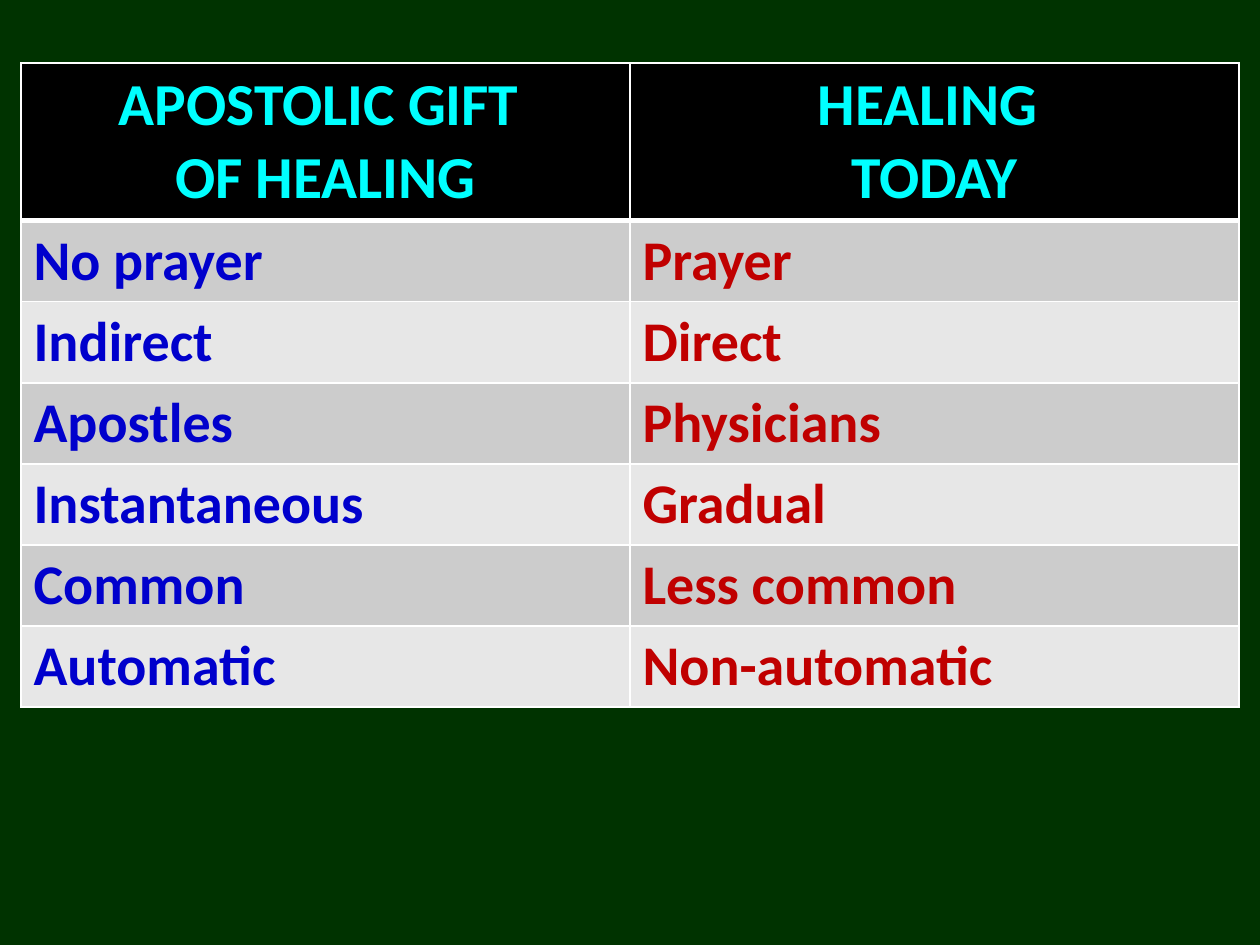
from lxml import etree
from pptx import Presentation
from pptx.dml.color import RGBColor
from pptx.enum import text
from pptx.oxml import ns
from pptx.util import Emu, Pt

GREEN = RGBColor(0x00, 0x33, 0x00)
BLACK = RGBColor(0x00, 0x00, 0x00)
WHITE = RGBColor(0xFF, 0xFF, 0xFF)
CYAN = RGBColor(0x00, 0xFF, 0xFF)
BLUE = RGBColor(0x00, 0x00, 0xCC)
RED = RGBColor(0xC0, 0x00, 0x00)
GREY = RGBColor(0xCC, 0xCC, 0xCC)
PALE = RGBColor(0xE7, 0xE7, 0xE7)

HEADINGS = ("APOSTOLIC GIFT \nOF HEALING", "HEALING \nTODAY")
CONTRASTS = [
    ("No prayer", "Prayer"),
    ("Indirect", "Direct"),
    ("Apostles", "Physicians"),
    ("Instantaneous", "Gradual"),
    ("Common", "Less common"),
    ("Automatic", "Non-automatic"),
]


def px(n):
    return Emu(round(n * 914400 / 126))


class Deck:
    header = {"name": "Calibri", "size": Pt(34), "bold": True}
    body = {"name": "Calibri", "size": Pt(32), "bold": True}

    def __init__(self, width, height):
        self.prs = Presentation()
        self.prs.slide_width, self.prs.slide_height = px(width), px(height)
        self.s = self.prs.slides.add_slide(self.prs.slide_layouts[6])

    def background(self, color):
        fill = self.s.background.fill
        fill.solid()
        fill.fore_color.rgb = color

    def borders(self, cell, widths):
        tc_pr = cell._tc.get_or_add_tcPr()
        for side, width in widths.items():
            ln = etree.SubElement(tc_pr, ns.qn(f"a:ln{side}"), w=str(Pt(width)))
            solid = etree.SubElement(ln, ns.qn("a:solidFill"))
            etree.SubElement(solid, ns.qn("a:srgbClr"), val=str(WHITE))

    def cell(self, cell, words, style, color, fill, align, widths):
        self.borders(cell, widths)
        cell.fill.solid()
        cell.fill.fore_color.rgb = fill
        tf = cell.text_frame
        tf.text = words
        for p in tf.paragraphs:
            p.alignment = align
            for r in p.runs:
                for key, value in style.items():
                    setattr(r.font, key, value)
                r.font.color.rgb = color

    def table(self, left, top, col_width, row_heights, headings, rows):
        grid = [headings, *rows]
        frame = self.s.shapes.add_table(
            len(grid), len(headings), px(left), px(top),
            px(col_width * len(headings)), px(sum(row_heights)))
        table = frame.table
        for col in table.columns:
            col.width = px(col_width)
        for i, (words, height) in enumerate(zip(grid, row_heights)):
            table.rows[i].height = px(height)
            widths = {"L": 1, "R": 1, "T": 3 if i == 1 else 1, "B": 3 if i == 0 else 1}
            for j, word in enumerate(words):
                if i == 0:
                    look = (self.header, CYAN, BLACK, text.PP_ALIGN.CENTER)
                else:
                    look = (self.body, (BLUE, RED)[j], (PALE, GREY)[i % 2],
                            text.PP_ALIGN.LEFT)
                self.cell(table.cell(i, j), word, *look, widths)


def main():
    deck = Deck(1260, 945)
    deck.background(GREEN)
    deck.table(21, 63, 609, [156] + [80] * len(CONTRASTS), HEADINGS, CONTRASTS)
    deck.prs.save("out.pptx")


if __name__ == "__main__":
    main()
